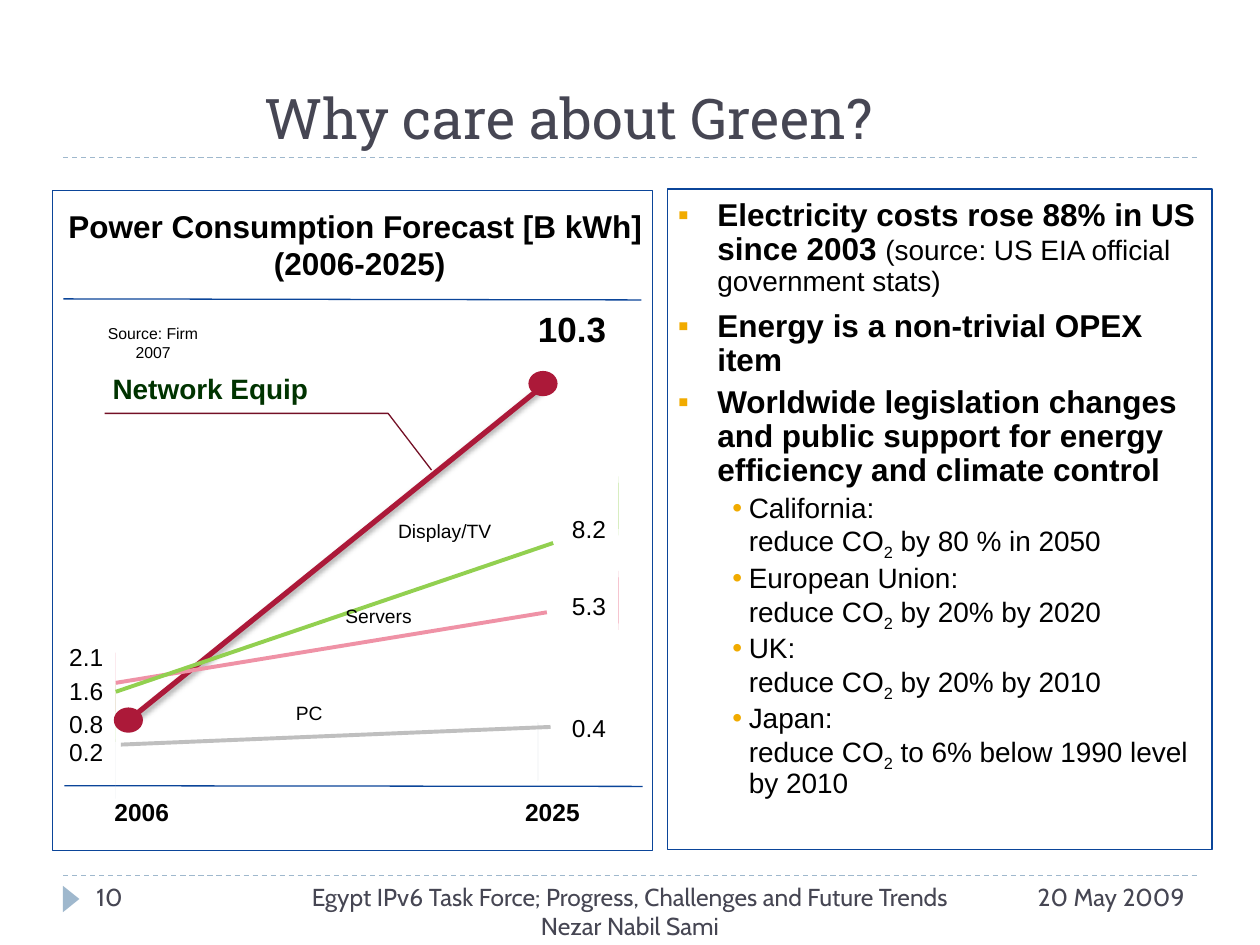
"""Build the slide on power use forecasts and the reasons to care about green."""
from dataclasses import dataclass

from lxml.etree import SubElement
from pptx import Presentation
from pptx.dml.color import RGBColor
from pptx.enum.dml import MSO_LINE
from pptx.enum.shapes import MSO_CONNECTOR, MSO_SHAPE
from pptx.enum.text import MSO_ANCHOR, MSO_AUTO_SIZE, PP_ALIGN
from pptx.oxml.ns import qn
from pptx.util import Pt


@dataclass
class Theme:
    ink: str = "464653"
    black: str = "000000"
    rule: str = "9FB8CD"
    frame: str = "0B4599"
    red: str = "AC1939"
    dark: str = "741026"
    rose: str = "EF92A6"
    pink: str = "E75B7A"
    lime: str = "92D050"
    grey: str = "BFBFBF"
    pale: str = "CCD0DF"
    green: str = "003300"
    gold: str = "F1AB00"
    title: int = 32
    peak: int = 20
    head: int = 18
    body: int = 16
    label: int = 14
    name: int = 11
    note: int = 9


theme = Theme()
LEFT, MID, RIGHT = PP_ALIGN.LEFT, PP_ALIGN.CENTER, PP_ALIGN.RIGHT
deck = Presentation()
deck.slide_width, deck.slide_height = Pt(720), Pt(540)
slide = deck.slides.add_slide(deck.slide_layouts[5])
shapes = slide.shapes


def write(words, area, size, align=MID, bold=False, color=theme.black, face="Arial", wrap=False):
    box = shapes.add_textbox(*map(Pt, area))
    frame = box.text_frame
    frame.word_wrap = wrap
    para = frame.paragraphs[0]
    para.text = words
    para.alignment = align
    for run in para.runs:
        run.font.size, run.font.bold, run.font.name = Pt(size), bold, face
        run.font.color.rgb = RGBColor.from_string(color)


def draw(start, end, color, width=0.75):
    line = shapes.add_connector(MSO_CONNECTOR.STRAIGHT, *map(Pt, start + end))
    line.line.color.rgb = RGBColor.from_string(color)
    line.line.width = Pt(width)
    return line, SubElement(line._element.spPr, qn("a:effectLst"))


for y in (500.4, 90):
    rule, _ = draw((36, y), (684, y), theme.rule)
    rule.line.dash_style = MSO_LINE.DASH
mark = shapes.add_shape(MSO_SHAPE.ISOSCELES_TRIANGLE, Pt(33.1), Pt(509), Pt(15.1), Pt(9.4))
mark.rotation = 90
mark.shadow.inherit = False
mark.fill.solid()
mark.fill.fore_color.rgb = RGBColor.from_string(theme.rule)
mark.line.fill.background()

title = shapes.title
title.left, title.top, title.width, title.height = Pt(144), Pt(18), Pt(540), Pt(72)
title.text_frame.text = "Why care about Green?"
title.text_frame.auto_size = MSO_AUTO_SIZE.NONE
title.text_frame.vertical_anchor = MSO_ANCHOR.BOTTOM
para = title.text_frame.paragraphs[0]
para.alignment = LEFT
font = para.runs[0].font
font.size, font.name = Pt(theme.title), "Roboto Slab"
font.color.rgb = RGBColor.from_string(theme.ink)

for words, x, width, align in (
    ("20 May 2009", 576, 108, RIGHT),
    ("Egypt IPv6 Task Force; Progress, Challenges and Future Trends Nezar Nabil Sami", 162, 396, MID),
    ("10", 48, 65.5, LEFT),
):
    write(words, (x, 500.4, width, 28.8), theme.label, align, color=theme.ink, face="Cabin", wrap=True)

write("Power Consumption Forecast [B kWh] \n(2006-2025)", (31.7, 114.5, 347.8, 50.4), theme.head, bold=True)
draw((36.3, 170.8), (366.5, 171.4), theme.frame)
draw((36.8, 449), (367.2, 449.4), theme.frame)
for year, x in (("2006", 58.3), ("2025", 293)):
    write(year, (x, 451.8, 45.4, 23.8), theme.label, bold=True)

for x, y, color in (
    (353.5, 326.2, theme.pink), (66.2, 373, theme.pink),
    (66.2, 390.2, theme.lime), (353.5, 272.2, theme.lime),
    (66.2, 422.6, theme.pale), (307.4, 412.6, theme.pale),
):
    sliver = shapes.add_shape(MSO_SHAPE.OVAL, Pt(x), Pt(y), Pt(0.1), Pt(33.8))
    sliver.shadow.inherit = False
    sliver.fill.solid()
    sliver.fill.fore_color.rgb = RGBColor.from_string(color)
    sliver.line.fill.background()

_, effects = draw((78.5, 407.5), (309.6, 221), theme.red, 3)
shade = SubElement(effects, qn("a:outerShdw"), blurRad=str(Pt(3.1)), dist=str(Pt(1.8)), dir="5400000")
tint = SubElement(shade, qn("a:srgbClr"), val=theme.black)
SubElement(tint, qn("a:alpha"), val="35000")
for start, end, color in (
    ((66.2, 390.2), (312.5, 349.9), theme.rose),
    ((66.2, 395.3), (316.1, 310.3), theme.lime),
    ((69.1, 425.5), (314.6, 415.4), theme.grey),
):
    draw(start, end, color, 2.25)

write("Network Equip", (56.9, 208.8, 126.7, 26.6), theme.body, bold=True, color=theme.green)
for words, x, y, width in (
    ("Display/TV", 220.3, 293, 67.7), ("Servers", 190.1, 342, 52.6), ("PC", 162, 397.4, 29.5),
):
    write(words, (x, y, width, 20.2), theme.name)
write("10.3", (300.2, 172.1, 53.3, 31), theme.peak, RIGHT, bold=True)
for x, values in (
    (319.7, (("8.2", 290.2), ("5.3", 334.1), ("0.4", 403.9))),
    (32.4, (("0.2", 417.6), ("0.8", 401.8), ("1.6", 383), ("2.1", 363.6))),
):
    for words, y in values:
        write(words, (x, y, 33.8, 23.8), theme.label, RIGHT)

for x, y in ((303.1, 213.1), (66.2, 405.4)):
    dot = shapes.add_shape(MSO_SHAPE.OVAL, Pt(x), Pt(y), Pt(14.4), Pt(12.2))
    dot.shadow.inherit = False
    dot.fill.solid()
    dot.fill.fore_color.rgb = dot.line.color.rgb = RGBColor.from_string(theme.red)
    dot.line.width = Pt(2.25)

path = shapes.build_freeform(Pt(59.8), Pt(236.2))
path.add_line_segments([(Pt(221.8), Pt(236.2)), (Pt(246.6), Pt(268.6))], close=False)
leader = path.convert_to_shape()
leader.shadow.inherit = False
leader.fill.background()
leader.line.color.rgb = RGBColor.from_string(theme.dark)
leader.line.width = Pt(0.75)
write("Source: Firm 2007", (44.6, 181.4, 85.7, 18), theme.note)

points = (
    (0, "Electricity costs rose 88% in US since 2003 ", "(source: US EIA official government stats)"),
    (0, "Energy is a non-trivial OPEX item", ""),
    (0, "Worldwide legislation changes and public support for energy efficiency and climate control", ""),
    (1, "California: \nreduce CO", " by 80 % in 2050"),
    (1, "European Union: \nreduce CO", " by 20% by 2020"),
    (1, "UK: \nreduce CO", " by 20% by 2010"),
    (1, "Japan: \nreduce CO", " to 6% below 1990 level by 2010"),
)
levels = ((22.5, -22.5, "▪", 4.5), (40.5, -9.4, "•", 3.2))
box = shapes.add_textbox(Pt(387.4), Pt(113.8), Pt(302.4), Pt(351.4))
frame = box.text_frame
frame.word_wrap = True
frame.margin_left = frame.margin_right = frame.margin_top = frame.margin_bottom = 0
for index, (level, lead, rest) in enumerate(points):
    margin, indent, sign, gap = levels[level]
    para = frame.add_paragraph() if index else frame.paragraphs[0]
    para.text = lead
    para.level = level
    props = para._p.get_or_add_pPr()
    props.set("marL", str(Pt(margin)))
    props.set("indent", str(Pt(indent)))
    SubElement(SubElement(props, qn("a:buClr")), qn("a:srgbClr"), val=theme.gold)
    SubElement(props, qn("a:buFont"), typeface="Arial")
    SubElement(props, qn("a:buChar"), char=sign)
    para.line_spacing = 0.9
    if index:
        para.space_before = Pt(gap)
    else:
        para.space_after = Pt(3)
    strong = len(para.runs) if level == 0 else 0
    if level:
        sub = para.add_run()
        sub.text = "2"
        sub.font._element.set("baseline", "-25000")
    if rest:
        para.add_run().text = rest
    for place, run in enumerate(para.runs):
        run.font.name, run.font.bold = "Arial", place < strong
        run.font.size = Pt(theme.head if place < strong else theme.body)
        run.font.color.rgb = RGBColor.from_string(theme.black)

for x, y, width in ((30.2, 108.7, 342.7), (381.6, 108, 311)):
    panel = shapes.add_shape(MSO_SHAPE.RECTANGLE, Pt(x), Pt(y), Pt(width), Pt(377.3))
    panel.shadow.inherit = False
    panel.fill.background()
    panel.line.color.rgb = RGBColor.from_string(theme.frame)
    panel.line.width = Pt(0.75)

deck.save("out.pptx")
